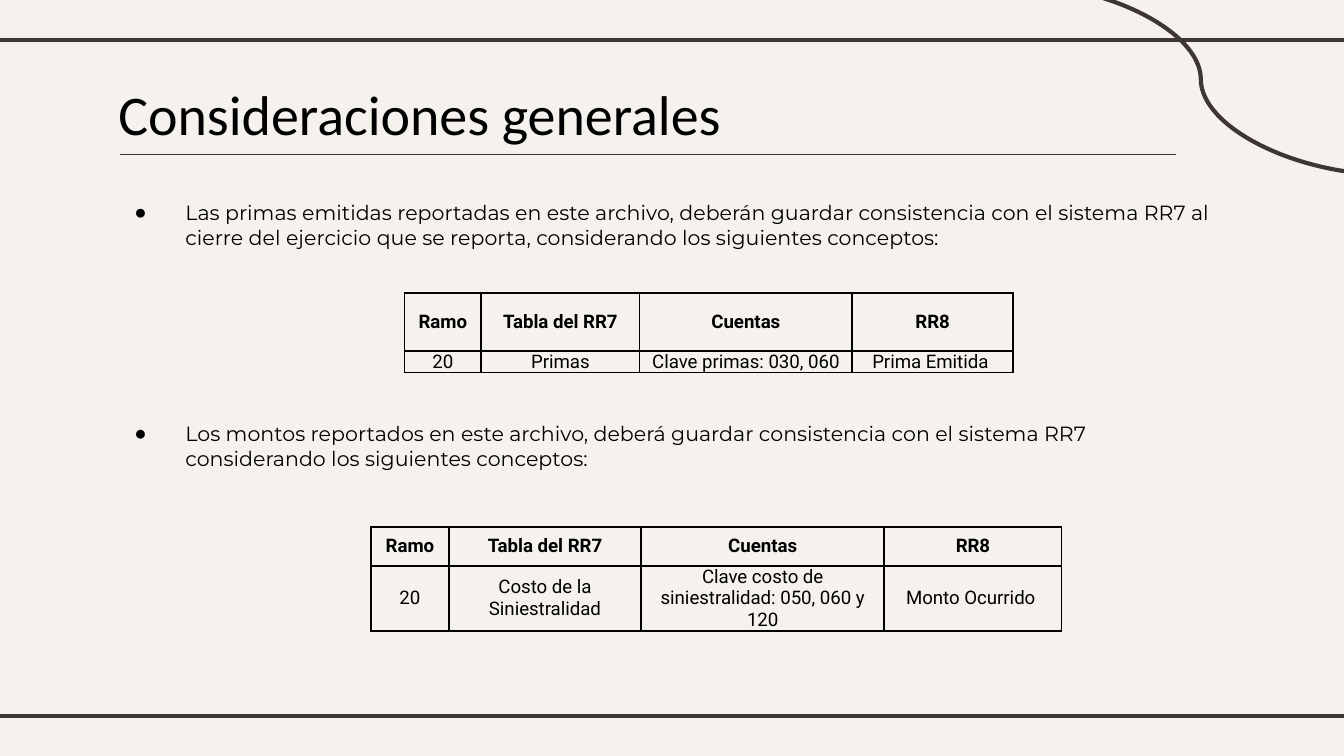
import pptx
import pptx.dml.color
import pptx.enum.shapes
import pptx.enum.text
import pptx.oxml
import pptx.oxml.ns
import pptx.util
from lxml import etree
from pptx.util import Inches

COLORS = {"paper": "F5F2EE", "frame": "3F3533", "rule": "3E3432", "ink": "000000"}
HEADINGS = ["Ramo", "Tabla del RR7", "Cuentas", "RR8"]
CONSIDERATIONS = [
    "Las primas emitidas reportadas en este archivo, deberán guardar consistencia con el "
    "sistema RR7 al cierre del ejercicio que se reporta, considerando los siguientes conceptos:",
    "Los montos reportados en este archivo, deberá guardar consistencia con el "
    "sistema RR7 considerando los siguientes conceptos:",
]


def rgb(name):
    return pptx.dml.color.RGBColor.from_string(COLORS[name])


def add_node(parent, tag, **attributes):
    return etree.SubElement(parent, pptx.oxml.ns.qn(tag), **attributes)


def format_runs(paragraph, font, size, bold=False):
    for run in paragraph.runs:
        run.font.name = font
        run.font.size = pptx.util.Pt(size)
        run.font.bold = bold
        run.font.color.rgb = rgb("ink")


def add_line(slide, start, end, color, width, curved=False):
    kinds = pptx.enum.shapes.MSO_CONNECTOR
    kind = kinds.CURVE if curved else kinds.STRAIGHT
    line = slide.shapes.add_connector(kind, *map(Inches, start + end))
    line.line.color.rgb = rgb(color)
    line.line.width = pptx.util.Pt(width)
    add_node(line._element.spPr, "a:effectLst")


def place(holder, left, top, width, height):
    holder.left, holder.top = Inches(left), Inches(top)
    holder.width, holder.height = Inches(width), Inches(height)
    frame = holder.text_frame
    frame.margin_left = frame.margin_right = Inches(0.1)
    frame.margin_top = frame.margin_bottom = Inches(0.1)
    frame.vertical_anchor = pptx.enum.text.MSO_ANCHOR.TOP
    frame.auto_size = pptx.enum.text.MSO_AUTO_SIZE.NONE
    frame.word_wrap = True
    return frame


def fill_title(slide):
    frame = place(slide.shapes.title, 0.78, 0.49, 5.15, 0.63)
    frame.text = "Consideraciones generales"
    heading = frame.paragraphs[0]
    heading.alignment = pptx.enum.text.PP_ALIGN.LEFT
    format_runs(heading, "Calibri", 30)


def add_bullet(paragraph):
    properties = paragraph._p.get_or_add_pPr()
    properties.set("marL", str(Inches(0.5)))
    properties.set("indent", str(Inches(-0.38)))
    bullet_color = add_node(properties, "a:buClr")
    add_node(bullet_color, "a:srgbClr", val=COLORS["ink"])
    add_node(properties, "a:buChar", char="●")


def fill_considerations(slide):
    frame = place(slide.placeholders[1], 0.78, 1.39, 8.44, 3.6)
    frame.text = "\n".join(CONSIDERATIONS)
    for paragraph, gap in zip(frame.paragraphs, (0, 92)):
        add_bullet(paragraph)
        paragraph.space_before = pptx.util.Pt(gap)
        format_runs(paragraph, "Montserrat", 11)


def add_borders(cell):
    properties = cell._tc.get_or_add_tcPr()
    for side in ("a:lnL", "a:lnR", "a:lnT", "a:lnB"):
        border = add_node(properties, side, w=str(pptx.util.Pt(1)))
        fill = add_node(border, "a:solidFill")
        add_node(fill, "a:srgbClr", val=COLORS["ink"])


def format_cell(cell, text, bold):
    add_borders(cell)
    cell.fill.background()
    cell.margin_left = cell.margin_right = Inches(0.05)
    cell.margin_top = cell.margin_bottom = 0
    cell.vertical_anchor = pptx.enum.text.MSO_ANCHOR.MIDDLE
    cell.text_frame.text = text
    paragraph = cell.text_frame.paragraphs[0]
    paragraph.alignment = pptx.enum.text.PP_ALIGN.CENTER
    format_runs(paragraph, "Roboto", 10, bold)


def add_concepts(slide, left, top, widths, heights, concepts):
    frame = slide.shapes.add_table(
        len(heights), len(widths), Inches(left), Inches(top),
        Inches(sum(widths)), Inches(sum(heights)))
    table = frame.table
    table.first_row = table.horz_banding = False
    for column, width in zip(table.columns, widths):
        column.width = Inches(width)
    for row, height in zip(table.rows, heights):
        row.height = Inches(height)
    for r, texts in enumerate((HEADINGS, concepts)):
        for c, text in enumerate(texts):
            format_cell(table.cell(r, c), text, bold=r == 0)


def main():
    deck = pptx.Presentation()
    deck.slide_width, deck.slide_height = Inches(10), Inches(10 * 9 / 16)
    slide = deck.slides.add_slide(deck.slide_layouts[1])
    slide.background.fill.solid()
    slide.background.fill.fore_color.rgb = rgb("paper")

    for y in (0.3, 5.33):
        add_line(slide, (-0.08, y), (10.08, y), "frame", 2.25)
    add_line(slide, (7.53, -0.12), (10.34, 1.3), "frame", 2.25, curved=True)
    fill_title(slide)
    fill_considerations(slide)
    add_concepts(slide, 3.01, 2.18, (0.57, 1.18, 1.58, 1.2), (0.43, 0.16),
                 ["20", "Primas", "Clave primas: 030, 060", "Prima Emitida "])
    add_concepts(slide, 2.76, 3.92, (0.58, 1.43, 1.81, 1.32), (0.29, 0.48),
                 ["20", "Costo de la Siniestralidad",
                  "Clave costo de siniestralidad: 050, 060 y 120", "Monto Ocurrido "])
    add_line(slide, (0.89, 1.15), (8.75, 1.15), "rule", 0.75)
    deck.save("out.pptx")


if __name__ == "__main__":
    main()
